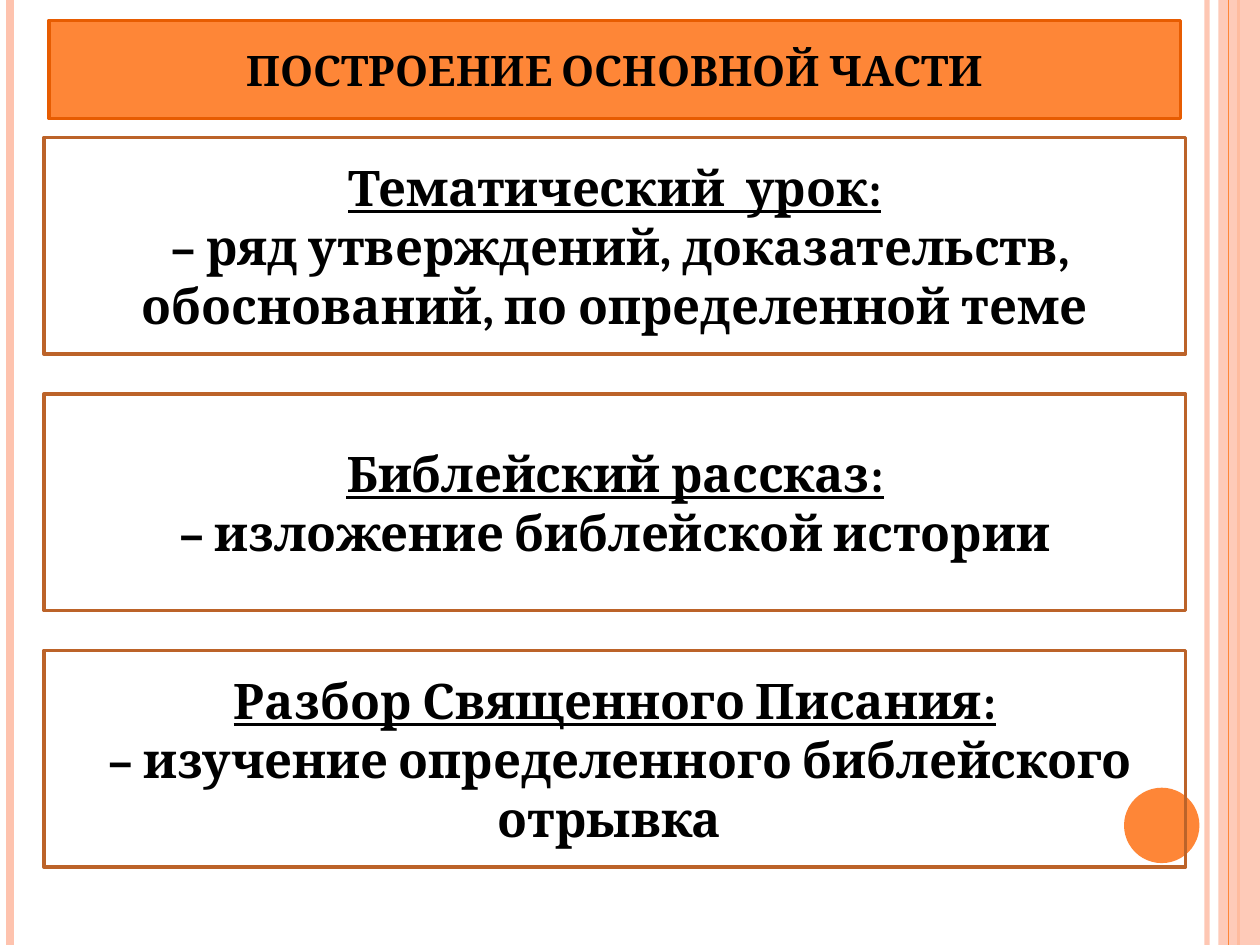
from lxml.etree import SubElement
from pptx import Presentation
from pptx.dml.color import RGBColor
from pptx.enum.shapes import MSO_CONNECTOR, MSO_SHAPE
from pptx.enum.text import MSO_ANCHOR, MSO_AUTO_SIZE, PP_ALIGN
from pptx.oxml.ns import qn
from pptx.util import Cm, Pt

ORANGE = RGBColor(0xFE, 0x86, 0x37)
DARK_ORANGE = RGBColor(0xE7, 0x5C, 0x01)
BROWN = RGBColor(0xBC, 0x63, 0x29)
PEACH = RGBColor(0xFE, 0xC3, 0xAE)
BLACK = RGBColor(0, 0, 0)

WIDTH, HEIGHT = 25.4, 19.05
HEADING = "ПОСТРОЕНИЕ ОСНОВНОЙ ЧАСТИ"
LESSON_TYPES = [
    ("Тематический  урок:",
     " – ряд утверждений, доказательств, обоснований, по определенной теме"),
    ("Библейский рассказ:", " – изложение библейской истории "),
    ("Разбор Священного Писания:",
     " – изучение определенного библейского отрывка "),
]


def set_alpha(part, percent):
    """Make the part's first solid colour partly transparent."""
    color = next(part._element.spPr.iter(qn("a:srgbClr")))
    SubElement(color, qn("a:alpha"), val=str(percent * 1000))


def set_outline(part, color, width):
    part.line.color.rgb = color
    part.line.width = Pt(width)


def write_lines(frame, lines, size):
    """Fill the frame with centred bold lines of (text, underline)."""
    frame.word_wrap = True
    frame.auto_size = MSO_AUTO_SIZE.NONE
    frame.vertical_anchor = MSO_ANCHOR.MIDDLE
    for index, (text, underline) in enumerate(lines):
        paragraph = frame.paragraphs[0] if index == 0 else frame.add_paragraph()
        paragraph.alignment = PP_ALIGN.CENTER
        run = paragraph.add_run()
        run.text = text
        font_format = {"name": "Cambria", "size": Pt(size), "bold": True,
                       "underline": underline}
        for attribute, value in font_format.items():
            setattr(run.font, attribute, value)
        run.font.color.rgb = BLACK


def add_stripe(slide, x, color, width, alpha=None):
    stripe = slide.shapes.add_connector(
        MSO_CONNECTOR.STRAIGHT, Cm(x), 0, Cm(x), Cm(HEIGHT))
    set_outline(stripe, color, width)
    SubElement(stripe._element.spPr, qn("a:effectLst"))
    if alpha:
        set_alpha(stripe, alpha)


def add_plain_shape(slide, kind, left, top, width, height, fill):
    shape = slide.shapes.add_shape(
        kind, Cm(left), Cm(top), Cm(width), Cm(height))
    shape.shadow.inherit = False
    shape.fill.solid()
    shape.fill.fore_color.rgb = fill
    shape.line.fill.background()
    return shape


def add_side_decor(slide, left, width):
    """Stripes, band and disc along the right edge."""
    add_stripe(slide, left, PEACH, 3, 93)
    add_stripe(slide, left + 0.64, ORANGE, 1.5)
    band = add_plain_shape(slide, MSO_SHAPE.RECTANGLE, left + 0.23, 0,
                           width - 0.23, HEIGHT, PEACH)
    set_alpha(band, 87)
    add_stripe(slide, left + 0.44, ORANGE, 0.75)
    add_plain_shape(slide, MSO_SHAPE.OVAL, left - 1.67, 15.88, 1.52, 1.52, ORANGE)


def add_heading(slide, left, top, width, height):
    heading = slide.shapes.title
    box = {"left": left, "top": top, "width": width, "height": height}
    for attribute, value in box.items():
        setattr(heading, attribute, Cm(value))
    heading.fill.solid()
    heading.fill.fore_color.rgb = ORANGE
    set_outline(heading, DARK_ORANGE, 2)
    write_lines(heading.text_frame, [(HEADING, False)], 24)


def add_lesson_types(slide, left, top, width, height):
    """Equal framed boxes, spread evenly over the given height."""
    box_height = 4.37
    pitch = (height - box_height) / (len(LESSON_TYPES) - 1)
    for index, (lesson, description) in enumerate(LESSON_TYPES):
        box = slide.shapes.add_shape(
            MSO_SHAPE.RECTANGLE, Cm(left), Cm(top + index * pitch),
            Cm(width), Cm(box_height))
        box.shadow.inherit = False
        box.fill.background()
        set_outline(box, BROWN, 2)
        write_lines(box.text_frame, [(lesson, True), (description, False)], 28)


def main():
    presentation = Presentation()
    presentation.slide_width, presentation.slide_height = Cm(WIDTH), Cm(HEIGHT)
    slide = presentation.slides.add_slide(presentation.slide_layouts[5])

    # Background decoration
    add_stripe(slide, 0.2, PEACH, 4.5)
    add_side_decor(slide, 24.33, WIDTH - 24.33)

    # Content
    add_heading(slide, 0.99, 0.41, 22.81, 1.98)
    add_lesson_types(slide, 0.89, 2.77, 23.01, 14.71)

    presentation.save("out.pptx")


if __name__ == "__main__":
    main()
